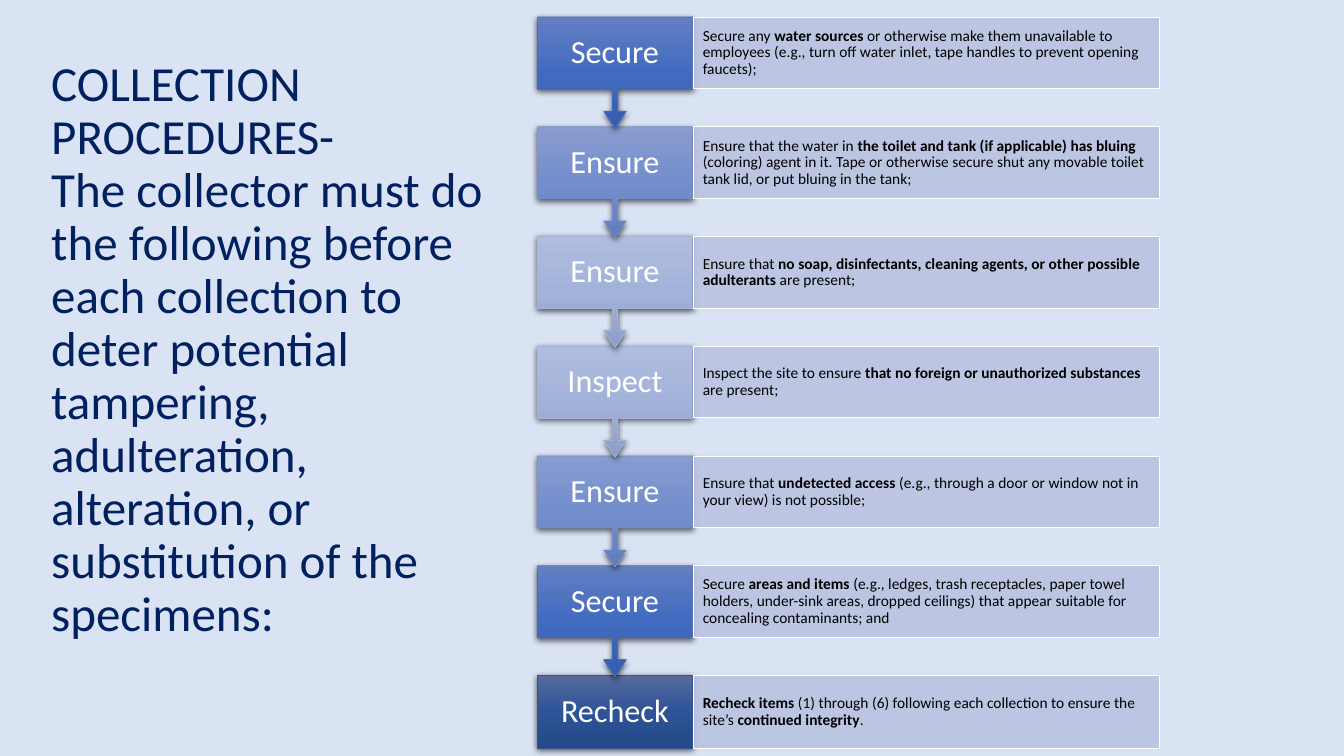
from pptx import Presentation
from pptx.dml.color import RGBColor
from pptx.enum.shapes import MSO_SHAPE
from pptx.enum.text import MSO_ANCHOR, PP_ALIGN
from pptx.oxml import parse_xml
from pptx.oxml.ns import nsdecls, qn
from pptx.util import Pt

TITLE_LINES = [
    "COLLECTION PROCEDURES-",
    "The collector must do the following before each collection to ",
    "deter potential tampering, ",
    "adulteration, ",
    "alteration, or substitution of the specimens:",
]
STEPS = [
    ("Secure", "strong", [("Secure any ", False), ("water sources ", True),
        ("or otherwise make them unavailable to employees (e.g., turn off water inlet, "
         "tape handles to prevent opening faucets);", False)]),
    ("Ensure", "medium", [("Ensure that the water in ", False),
        ("the toilet and tank (if applicable) has bluing ", True),
        ("(coloring) agent in it. Tape or otherwise secure shut any movable toilet tank lid, "
         "or put bluing in the tank;", False)]),
    ("Ensure", "light", [("Ensure that ", False),
        ("no soap, disinfectants, cleaning agents, or other possible adulterants", True),
        (" are present;", False)]),
    ("Inspect", "light", [("Inspect the site to ensure ", False),
        ("that no foreign or unauthorized substances ", True), ("are present;", False)]),
    ("Ensure", "medium", [("Ensure that ", False), ("undetected access ", True),
        ("(e.g., through a door or window not in your view) is not possible;", False)]),
    ("Secure", "strong", [("Secure ", False), ("areas and items ", True),
        ("(e.g., ledges, trash receptacles, paper towel holders, under-sink areas, "
         "dropped ceilings) that appear suitable for concealing contaminants; and", False)]),
    ("Recheck", "dark", [("Recheck items ", True),
        ("(1) through (6) following each collection to ensure the site’s ", False),
        ("continued integrity", True), (".", False)]),
]
THEME = {
    "font": "Calibri",
    "background": "DAE3F3", "title": "002060", "label": "FFFFFF", "body": "000000",
    "panel": "B9C2E1", "panel_line": "FFFFFF",
    "title_size": 35, "label_size": 23, "body_size": 11, "line_width": 0.5,
    "strong": (("637FC2", "426BC0", "345DB1"), "476DBB"),
    "medium": (("889CCF", "738ECD", "627CBB"), "7790C9"),
    "light": (("B1BDDE", "A3B2DB", "8E9DC6"), "A6B3D9"),
    "dark": (("566B9E", "2E5396", "244989"), "325491"),
}

PX = 9144
SLIDE_W, SLIDE_H = 1333, 750
TITLE_BOX = (41, 25, 510, 646)
LABEL_X, LABEL_W = 533, 154
PANEL_X, PANEL_W = 688, 462
FIRST_Y, LAST_Y = 17, 670
BOX_H, LAST_H, CALLOUT_H = 71, 72, 110
CALLOUT_ADJ = (0.05, 0.1, 0.15, 0.65)
RECT = MSO_SHAPE.RECTANGLE
CALLOUT = MSO_SHAPE.DOWN_ARROW_CALLOUT
MIDDLE = MSO_ANCHOR.MIDDLE
LEFT, CENTER = PP_ALIGN.LEFT, PP_ALIGN.CENTER


def px(*values):
    return [round(v * PX) for v in values]


def rgb(name):
    return RGBColor.from_string(THEME.get(name, name))


def start_text(sp, role, align, insets):
    tf = sp.text_frame
    tf.word_wrap = True
    tf.vertical_anchor = MIDDLE
    tf.margin_left, tf.margin_top, tf.margin_right, tf.margin_bottom = px(*insets * 2)
    p = tf.paragraphs[0]
    p.alignment = align
    p.line_spacing = 0.9
    p.font.name = THEME["font"]
    p.font.size = Pt(THEME[role + "_size"])
    p.font.color.rgb = rgb(role)
    return p


def add_title(slide):
    sp = slide.shapes.add_textbox(*px(*TITLE_BOX))
    p = start_text(sp, "title", LEFT, (10, 5))
    for i, line in enumerate(TITLE_LINES):
        if i:
            p.add_line_break()
        p.add_run().text = line


def add_box(slide, kind, box, line):
    sp = slide.shapes.add_shape(kind, *px(*box))
    sp.shadow.inherit = False
    sp.line.color.rgb = rgb(line)
    sp.line.width = Pt(THEME["line_width"])
    return sp


def add_label(slide, y, label, tone, is_last):
    colors, line = THEME[tone]
    kind, h = (RECT, LAST_H) if is_last else (CALLOUT, CALLOUT_H)
    sp = add_box(slide, kind, (LABEL_X, y, LABEL_W, h), line)
    if not is_last:
        for i, value in enumerate(CALLOUT_ADJ):
            sp.adjustments[i] = value
    sp.fill.gradient()
    sp.fill.gradient_angle = 270
    props = sp.element.spPr
    stops = props.find(".//" + qn("a:gsLst"))
    stops.clear()
    for pos, color in zip((0, 50000, 100000), colors):
        stops.append(parse_xml(
            f'<a:gs {nsdecls("a")} pos="{pos}"><a:srgbClr val="{color}"/></a:gs>'))
    props.find(qn("a:effectLst")).append(parse_xml(
        f'<a:outerShdw {nsdecls("a")} blurRad="57150" dist="19050" dir="5400000" '
        'algn="ctr" rotWithShape="0"><a:srgbClr val="000000">'
        '<a:alpha val="63000"/></a:srgbClr></a:outerShdw>'))
    start_text(sp, "label", CENTER, (11, 18)).add_run().text = label


def add_panel(slide, y, h, fragments):
    sp = add_box(slide, RECT, (PANEL_X, y, PANEL_W, h), "panel_line")
    sp.fill.solid()
    sp.fill.fore_color.rgb = rgb("panel")
    color = sp.element.spPr.find(qn("a:solidFill")).find(qn("a:srgbClr"))
    color.append(parse_xml(f'<a:alpha {nsdecls("a")} val="90000"/>'))
    p = start_text(sp, "body", LEFT, (9, 15))
    for text, bold in fragments:
        r = p.add_run()
        r.text = text
        r.font.bold = bold


def main():
    prs = Presentation()
    prs.slide_width, prs.slide_height = px(SLIDE_W, SLIDE_H)
    slide = prs.slides.add_slide(prs.slide_layouts[6])
    slide.background.fill.solid()
    slide.background.fill.fore_color.rgb = rgb("background")
    add_title(slide)

    last = len(STEPS) - 1
    pitch = (LAST_Y - FIRST_Y) / last
    for i, (label, tone, fragments) in reversed(list(enumerate(STEPS))):
        y = FIRST_Y + i * pitch
        add_label(slide, y, label, tone, i == last)
        add_panel(slide, y, LAST_H if i == last else BOX_H, fragments)
    prs.save("out.pptx")


if __name__ == "__main__":
    main()
